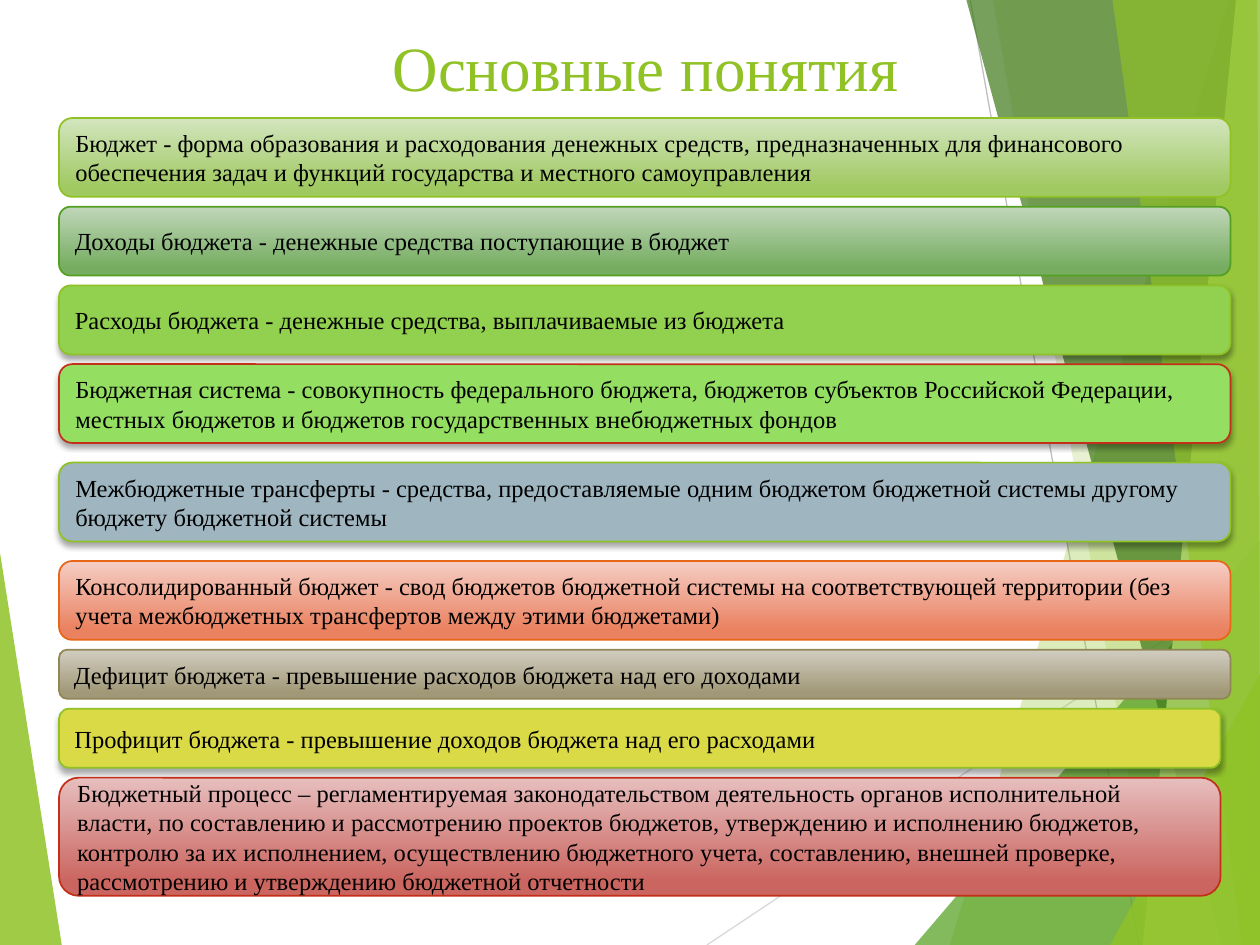
from dataclasses import dataclass

from lxml import etree
from pptx import Presentation
from pptx import util as u
from pptx.dml.color import RGBColor
from pptx.enum import shapes, text
from pptx.oxml import ns

SLIDE_BOX = (0, 0, u.Inches(10), u.Inches(7.5))
ROWS = 96
CELL = SLIDE_BOX[3] / ROWS  # square grid: 128 columns by 96 rows


@dataclass(frozen=True)
class Theme:
    font: str = "Times New Roman"
    title_size: int = 36
    body_size: int = 14
    ink: str = "000000"
    lime: str = "90C226"
    green: str = "54A021"
    forest: str = "3F7819"
    pale: str = "C0E474"
    red: str = "C42F1A"
    orange: str = "E76618"
    olive: str = "918655"


THEME = Theme()

# Background facets: colour, opacity in percent, corners as shares of the slide
FACETS = [
    (THEME.lime, 85, [(0, 0.585), (0.049, 1), (0, 1)]),
    (THEME.lime, 30, [(0.975, 0), (0.754, 1), (1, 1), (1, 0)]),
    (THEME.lime, 20, [(0.788, 0), (0.919, 1), (1, 1), (1, 0)]),
    (THEME.green, 72, [(0.726, 1), (1, 0.572), (1, 1)]),
    (THEME.forest, 70, [(0.767, 0), (0.97, 1), (1, 1), (1, 0)]),
    (THEME.pale, 70, [(0.981, 0), (0.907, 1), (1, 1), (1, 0)]),
    (THEME.lime, 65, [(0.883, 0), (0.986, 1), (1, 1), (0.998, 0)]),
    (THEME.lime, 80, [(0.881, 1), (1, 0.713), (1, 1)]),
]
RAYS = [("D9D9D9", (0.561, 1), (1, 0.61)), ("BFBFBF", (0.77, 0), (0.904, 1))]

# Definitions: top row, rows, columns, fill (one colour or a gradient), outline, text
DEFINITIONS = [
    (12, 8, 119, ("D3E5BE", "A0C962"), THEME.lime,
     "Бюджет - форма образования и расходования денежных средств, предназначенных "
     "для финансового обеспечения задач и функций государства и местного самоуправления"),
    (21, 7, 119, ("C0D6B9", "76AD61"), THEME.green,
     "Доходы бюджета - денежные средства поступающие в бюджет"),
    (29, 7, 119, ("92D050",), THEME.lime,
     "Расходы бюджета - денежные средства, выплачиваемые из бюджета"),
    (37, 8, 119, ("94DE61",), THEME.red,
     "Бюджетная система - совокупность федерального бюджета, бюджетов субъектов "
     "Российской Федерации, местных бюджетов и бюджетов государственных внебюджетных фондов"),
    (47, 8, 119, ("9FB6C0",), THEME.lime,
     "Межбюджетные трансферты - средства, предоставляемые одним бюджетом бюджетной "
     "системы другому бюджету бюджетной системы"),
    (57, 8, 119, ("F5CEC5", "EA815F"), THEME.orange,
     "Консолидированный бюджет - свод бюджетов бюджетной системы на соответствующей "
     "территории (без учета межбюджетных трансфертов между этими бюджетами)"),
    (66, 5, 119, ("D1CDC0", "A19877"), THEME.olive,
     "Дефицит бюджета - превышение расходов бюджета над его доходами"),
    (72, 6, 118, ("DADA46",), THEME.lime,
     "Профицит бюджета - превышение доходов бюджета над его расходами"),
    (79, 12, 118, ("E6BFBE", "CB6560"), THEME.red,
     "Бюджетный процесс – регламентируемая законодательством деятельность органов "
     "исполнительной власти, по составлению и рассмотрению проектов бюджетов, утверждению "
     "и исполнению бюджетов, контролю за их исполнением, осуществлению бюджетного учета, "
     "составлению, внешней проверке, рассмотрению и утверждению бюджетной отчетности"),
]


def color(value):
    return RGBColor.from_string(value)


def add_xml(parent, tag, **attributes):
    return etree.SubElement(parent, ns.qn(tag), attributes)


def style_text(paragraph, size, value, alignment):
    paragraph.alignment = alignment
    paragraph.font.name = THEME.font
    paragraph.font.size = u.Pt(size)
    paragraph.font.color.rgb = color(value)


def add_soft_shadow(shape):
    effects = shape._element.spPr.find(ns.qn("a:effectLst"))
    shadow = add_xml(effects, "a:outerShdw", blurRad=str(u.Pt(3)), dist=str(u.Pt(2)),
                     dir="5400000", rotWithShape="0")
    add_xml(add_xml(shadow, "a:srgbClr", val=THEME.ink), "a:alpha", val="35000")


def fill_shape(shape, colors):
    if len(colors) == 1:
        shape.fill.solid()
        shape.fill.fore_color.rgb = color(colors[0])
        return
    shape.fill.gradient()
    shape.fill.gradient_angle = 270
    for stop, position, value in zip(shape.fill.gradient_stops, (0, 0.88), colors):
        stop.position = position
        stop.color.rgb = color(value)


def build_background(slide, box):
    left, top, width, height = box

    def place(point):
        return round(left + point[0] * width), round(top + point[1] * height)

    def add_facet(value, opacity, corners):
        start, *others = map(place, corners)
        builder = slide.shapes.build_freeform(*start)
        builder.add_line_segments(others, close=True)
        facet = builder.convert_to_shape()
        facet.shadow.inherit = False
        fill_shape(facet, (value,))
        facet.line.fill.background()
        fill_color = facet._element.spPr.find(".//" + ns.qn("a:srgbClr"))
        add_xml(fill_color, "a:alpha", val=str(opacity * 1000))

    # Left facet lies under the rays, the right ones over them
    add_facet(*FACETS[0])
    for value, start, end in RAYS:
        ray = slide.shapes.add_connector(
            shapes.MSO_CONNECTOR.STRAIGHT, *place(start), *place(end))
        ray.line.color.rgb = color(value)
        ray.line.width = u.Pt(0.75)
        add_xml(ray._element.spPr, "a:effectLst")
    for facet in FACETS[1:]:
        add_facet(*facet)


def build_title(slide, box):
    title = slide.shapes.title
    title.left, title.top, title.width, title.height = map(round, box)
    frame = title.text_frame
    frame.text = "Основные понятия"
    frame.auto_size = text.MSO_AUTO_SIZE.NONE
    frame.vertical_anchor = text.MSO_ANCHOR.TOP
    style_text(frame.paragraphs[0], THEME.title_size, THEME.lime, text.PP_ALIGN.CENTER)


def build_definition(slide, box, colors, outline, wording):
    card = slide.shapes.add_shape(
        shapes.MSO_SHAPE.ROUNDED_RECTANGLE, *map(round, box))
    fill_shape(card, colors)
    card.line.color.rgb = color(outline)
    card.line.width = u.Pt(1)
    card.shadow.inherit = False
    if len(colors) == 1:  # flat cards are the raised ones
        add_soft_shadow(card)
    frame = card.text_frame
    frame.word_wrap = True
    frame.vertical_anchor = text.MSO_ANCHOR.MIDDLE
    frame.text = wording
    style_text(frame.paragraphs[0], THEME.body_size, THEME.ink, text.PP_ALIGN.LEFT)


def main():
    presentation = Presentation()
    presentation.slide_width, presentation.slide_height = SLIDE_BOX[2:]
    slide = presentation.slides.add_slide(presentation.slide_layouts.get_by_name("Title Only"))

    build_background(slide, SLIDE_BOX)
    width, height = SLIDE_BOX[2:]
    build_title(slide, (0.05 * width, 0.024 * height, 0.925 * width, 0.108 * height))
    for row, rows, columns, colors, outline, wording in DEFINITIONS:
        box = (6 * CELL, row * CELL, columns * CELL, rows * CELL)
        build_definition(slide, box, colors, outline, wording)

    presentation.save("out.pptx")


if __name__ == "__main__":
    main()
